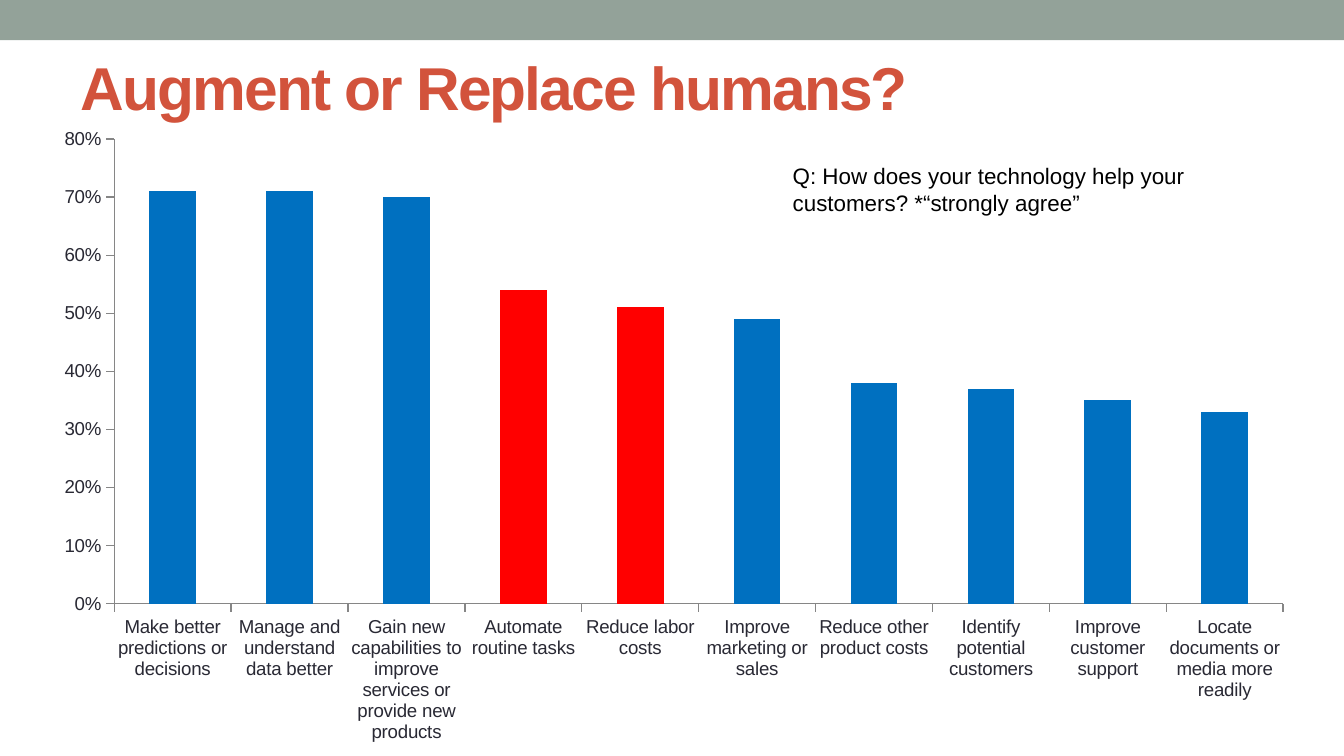
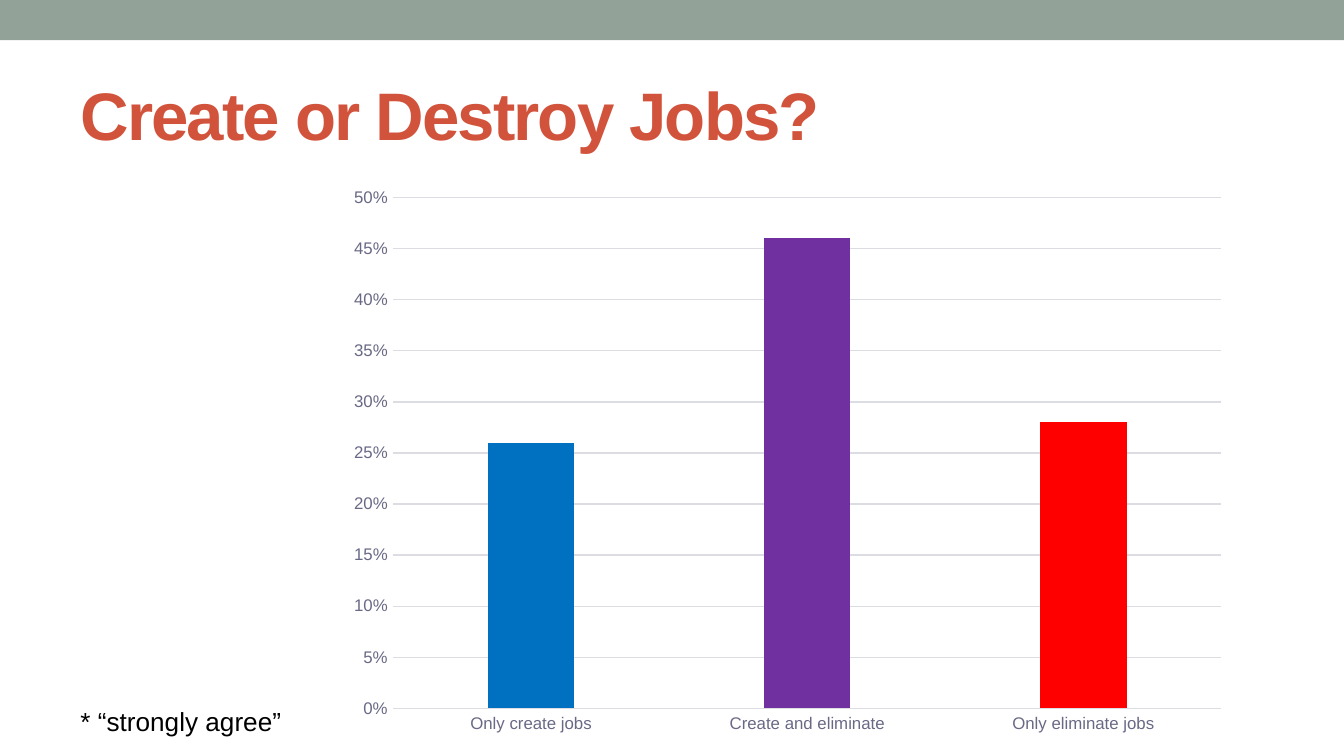
from dataclasses import dataclass

from pptx import Presentation
from pptx.chart.data import CategoryChartData
from pptx.dml.color import RGBColor
from pptx.enum.chart import XL_CHART_TYPE, XL_TICK_MARK
from pptx.enum.shapes import MSO_SHAPE
from pptx.enum.text import MSO_ANCHOR
from pptx.util import Pt


@dataclass(frozen=True)
class Theme:
    font: str = "Arial"
    band: RGBColor = RGBColor(0x93, 0xA2, 0x99)
    title: RGBColor = RGBColor(0xD2, 0x53, 0x3C)
    text: RGBColor = RGBColor(0x00, 0x00, 0x00)
    white: RGBColor = RGBColor(0xFF, 0xFF, 0xFF)
    dark: RGBColor = RGBColor(0x29, 0x29, 0x34)
    muted: RGBColor = RGBColor(0x69, 0x69, 0x86)
    axis: RGBColor = RGBColor(0x86, 0x86, 0x86)
    grid: RGBColor = RGBColor(0xDC, 0xDC, 0xE3)
    blue: RGBColor = RGBColor(0x00, 0x70, 0xC0)
    red: RGBColor = RGBColor(0xFF, 0x00, 0x00)
    purple: RGBColor = RGBColor(0x70, 0x30, 0xA0)
    question_size: float = 12
    footnote_size: float = 14
    label_size: float = 10
    small_label_size: float = 9
    line_width: float = 0.75


theme = Theme()


def add_text(slide, box, text, size, color):
    shape = slide.shapes.add_textbox(*(Pt(length) for length in box))
    shape.text_frame.word_wrap = True
    paragraph = shape.text_frame.paragraphs[0]
    paragraph.text = text
    font = paragraph.font
    font.name, font.size, font.color.rgb = theme.font, Pt(size), color
    return shape


def add_column_chart(slide, box, bars, maximum, step, gap, label_size, label_color):
    """Draw one series of percentages; bars holds (category, value, color) rows."""
    data = CategoryChartData(number_format="0%")
    data.categories = [category for category, _, _ in bars]
    data.add_series("Series 1", [value for _, value, _ in bars])
    chart = slide.shapes.add_chart(
        XL_CHART_TYPE.COLUMN_CLUSTERED, *(Pt(length) for length in box), data
    ).chart
    chart.has_legend = False
    chart.has_title = False
    chart.font.name = theme.font
    chart.font.size = Pt(label_size)
    chart.font.color.rgb = label_color

    plot = chart.plots[0]
    plot.vary_by_categories = False
    plot.gap_width = gap
    series = plot.series[0]
    series.invert_if_negative = False
    for index, (_, _, color) in enumerate(bars):
        fill = series.points[index].format.fill
        fill.solid()
        fill.fore_color.rgb = color

    value_axis = chart.value_axis
    value_axis.minimum_scale, value_axis.maximum_scale = 0, maximum
    value_axis.major_unit = step
    value_axis.tick_labels.number_format = "0%"
    value_axis.tick_labels.number_format_is_linked = False
    return chart


presentation = Presentation()
presentation.slide_width, presentation.slide_height = Pt(720), Pt(405)

# Shared band and title
titles = [
    ("Augment or Replace humans?", 26, 40, 32.4),
    ("Create or Destroy Jobs?", 32, 58, 36),
]
slides = []
for text, top, height, size in titles:
    slide = presentation.slides.add_slide(presentation.slide_layouts[6])
    band = slide.shapes.add_shape(MSO_SHAPE.RECTANGLE, 0, 0, Pt(720), Pt(21.5))
    band.shadow.inherit = False
    band.fill.solid()
    band.fill.fore_color.rgb = theme.band
    band.line.fill.background()

    title = add_text(slide, (36, top, 648, height), text, size, theme.title)
    title.text_frame.vertical_anchor = MSO_ANCHOR.MIDDLE
    paragraph = title.text_frame.paragraphs[0]
    paragraph.font.bold = True
    paragraph.runs[0].font._element.set("spc", "-100")
    slides.append(slide)
augment_slide, jobs_slide = slides

# Slide 1: how the technology helps customers
question = add_text(
    augment_slide,
    (417.6, 83.5, 282, 36),
    "Q: How does your technology help your customers? *“strongly agree”",
    theme.question_size,
    theme.text,
)
question.fill.solid()
question.fill.fore_color.rgb = theme.white

benefits = [
    ("Make better predictions or decisions", 0.71, theme.blue),
    ("Manage and understand data better", 0.71, theme.blue),
    ("Gain new capabilities to improve services or provide new products", 0.70, theme.blue),
    ("Automate routine tasks", 0.54, theme.red),
    ("Reduce labor costs", 0.51, theme.red),
    ("Improve marketing or sales", 0.49, theme.blue),
    ("Reduce other product costs", 0.38, theme.blue),
    ("Identify potential customers", 0.37, theme.blue),
    ("Improve customer support", 0.35, theme.blue),
    ("Locate documents or media more readily", 0.33, theme.blue),
]
benefit_chart = add_column_chart(
    augment_slide, (21, 62, 680, 343), benefits, 0.8, 0.1, 150,
    theme.label_size, theme.dark,
)
benefit_chart.value_axis.has_major_gridlines = False
for axis in (benefit_chart.category_axis, benefit_chart.value_axis):
    axis.major_tick_mark = XL_TICK_MARK.OUTSIDE
    axis.format.line.color.rgb = theme.axis
    axis.format.line.width = Pt(theme.line_width)

# Slide 2: effect on jobs
add_text(
    jobs_slide, (36, 374.5, 171, 24.5), "* “strongly agree”",
    theme.footnote_size, theme.text,
)
job_effects = [
    ("Only create jobs", 0.26, theme.blue),
    ("Create and eliminate", 0.46, theme.purple),
    ("Only eliminate jobs", 0.28, theme.red),
]
job_chart = add_column_chart(
    jobs_slide, (180, 94.5, 484, 304.5), job_effects, 0.5, 0.05, 219,
    theme.small_label_size, theme.muted,
)
job_chart.plots[0].overlap = -27
job_chart.value_axis.format.line.fill.background()
for axis in (job_chart.category_axis, job_chart.value_axis):
    axis.major_tick_mark = XL_TICK_MARK.NONE
for line in (
    job_chart.category_axis.format.line,
    job_chart.value_axis.major_gridlines.format.line,
):
    line.color.rgb = theme.grid
    line.width = Pt(theme.line_width)

presentation.save("out.pptx")
